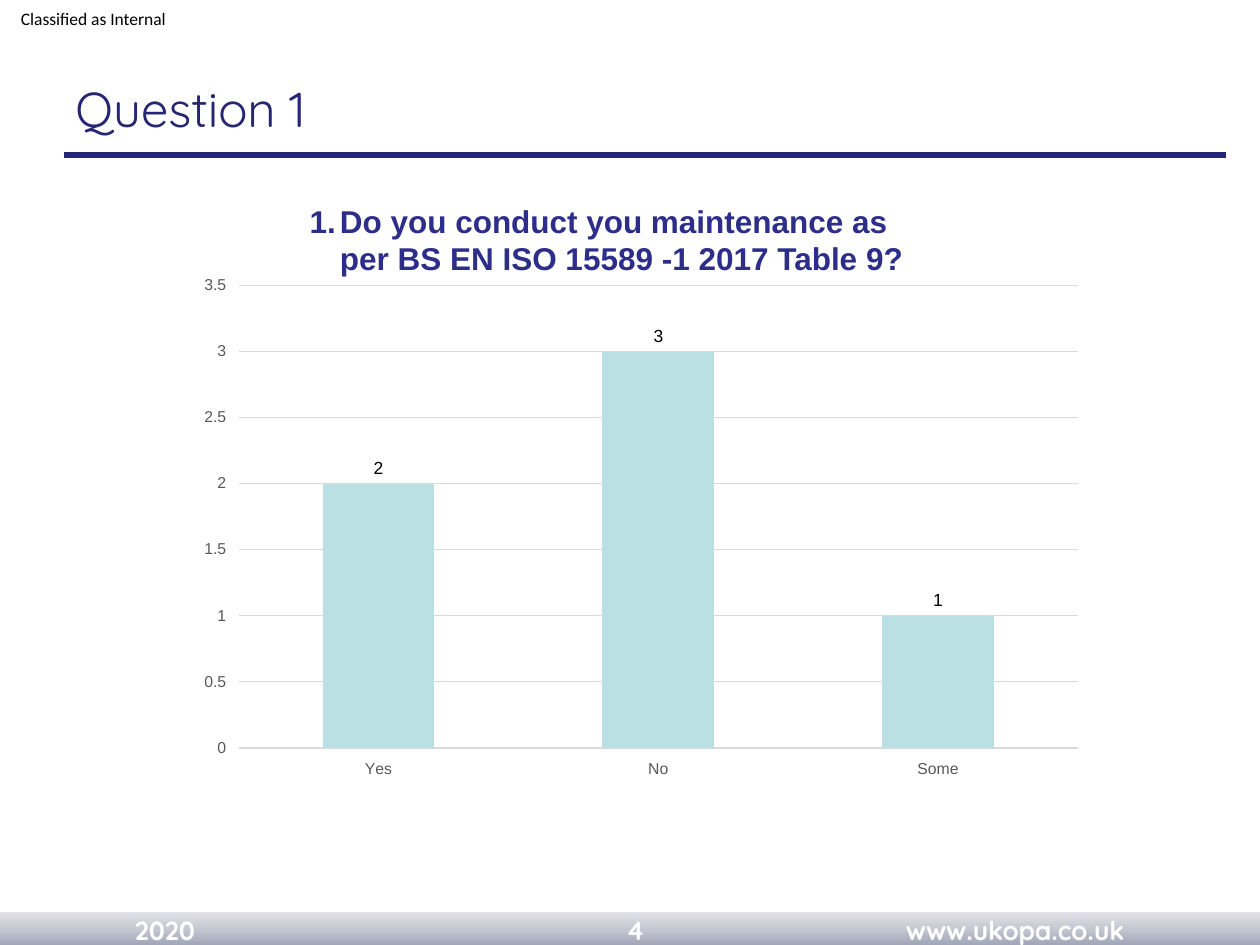
"""Build the Question 1 survey slide with a column chart of the answers."""
from copy import deepcopy
from lxml.etree import SubElement
from pptx import Presentation
from pptx.chart.data import CategoryChartData
from pptx.dml.color import RGBColor
from pptx.enum.chart import XL_CHART_TYPE, XL_LABEL_POSITION, XL_TICK_MARK
from pptx.enum.shapes import MSO_CONNECTOR, MSO_SHAPE
from pptx.enum.text import MSO_ANCHOR, PP_ALIGN
from pptx.oxml import parse_xml
from pptx.oxml.ns import nsdecls, qn
from pptx.util import Inches, Pt

THEME = {
    "navy": RGBColor.from_string("262673"),
    "bar": RGBColor.from_string("BBE0E3"),
    "grid": RGBColor.from_string("D9D9D9"),
    "band": [(0, "9BA0B4"), (0.5, "C3C6D0"), (1, "E2E3E8")],
    "footer": ("Quicksand", 15, True, "FFFFFF"),
    "marking": ("Calibri", 10, False, "000000"),
    "title": ("Quicksand", 28, False, "262673"),
    "question": ("Arial", 18, True, "2D2D8A"),
    "axis": ("Arial", 9, False, "595959"),
    "value": ("Arial", 10, False, "000000"),
}


def style_font(font, role):
    name, size, bold, color = THEME[role]
    for attribute, value in {"name": name, "size": Pt(size), "bold": bold}.items():
        setattr(font, attribute, value)
    font.color.rgb = RGBColor.from_string(color)


def write(frame, text, role, **format_values):
    for attribute, value in format_values.items():
        setattr(frame, attribute, value)
    paragraph = frame.paragraphs[0]
    paragraph.alignment = PP_ALIGN.LEFT
    run = paragraph.add_run()
    run.text = text
    style_font(run.font, role)
    return paragraph


prs = Presentation()
prs.slide_width, prs.slide_height = Inches(10), Inches(7.5)
slide = prs.slides.add_slide(prs.slide_layouts[6])
shapes = slide.shapes

footer = shapes.add_shape(MSO_SHAPE.RECTANGLE, 0, Inches(7.24), Inches(10), Inches(0.28))
footer.shadow.inherit = False
footer.line.fill.background()
footer.fill.gradient()
footer.fill.gradient_angle = 90
first_stop = footer._element.spPr.find(".//" + qn("a:gs"))
first_stop.addnext(deepcopy(first_stop))
for stop, (position, color) in zip(footer.fill.gradient_stops, THEME["band"]):
    stop.position = position
    stop.color.rgb = RGBColor.from_string(color)
footer_line = write(footer.text_frame, "2020\t4\twww.ukopa.co.uk", "footer", word_wrap=True,
                    vertical_anchor=MSO_ANCHOR.MIDDLE, margin_left=Inches(1.07),
                    margin_right=0, margin_top=0, margin_bottom=0)
tabs = SubElement(footer_line._p.get_or_add_pPr(), qn("a:tabLst"))
for stop_at in (3.9, 6.12):
    SubElement(tabs, qn("a:tab"), pos=str(Inches(stop_at)), algn="l")

title_rule = shapes.add_connector(MSO_CONNECTOR.STRAIGHT, Inches(0.51), Inches(1.23),
                                  Inches(9.73), Inches(1.23))
title_rule.line.color.rgb = THEME["navy"]
title_rule.line.width = Pt(3)
SubElement(title_rule._element.spPr, qn("a:effectLst"))

marking = shapes.add_textbox(0, 0, Inches(1.48), Inches(0.29))
write(marking.text_frame, "Classified as Internal", "marking", word_wrap=True,
      vertical_anchor=MSO_ANCHOR.MIDDLE, margin_left=0, margin_right=0,
      margin_top=0, margin_bottom=0).alignment = PP_ALIGN.CENTER

title = shapes.add_textbox(Inches(0.5), Inches(0.58), Inches(6.86), Inches(0.56))
write(title.text_frame, "Question 1", "title", word_wrap=True,
      vertical_anchor=MSO_ANCHOR.MIDDLE)

question = shapes.add_textbox(Inches(2.36), Inches(1.55), Inches(5), Inches(0.71))
numbered = write(question.text_frame,
                 "Do you conduct you maintenance as per BS EN ISO 15589 -1 2017 Table 9?",
                 "question", word_wrap=True)
numbering = numbered._p.get_or_add_pPr()
numbering.set("marL", str(Inches(0.24)))
numbering.set("indent", str(-Inches(0.24)))
SubElement(numbering, qn("a:buFont"), typeface="+mj-lt")
SubElement(numbering, qn("a:buAutoNum"), type="arabicPeriod")

answers = CategoryChartData()
answers.categories = ["Yes", "No", "Some"]
answers.add_series("Series 1", (2, 3, 1))
chart = shapes.add_chart(XL_CHART_TYPE.COLUMN_CLUSTERED, Inches(1.46), Inches(2.1),
                         Inches(7.24), Inches(4.17), answers).chart
style_font(chart.font, "value")
chart.has_title = False
chart.has_legend = False

for axis in (chart.category_axis, chart.value_axis):
    axis.major_tick_mark = XL_TICK_MARK.OUTSIDE
    axis.format.line.fill.background()
    style_font(axis.tick_labels.font, "axis")
scale = chart.value_axis
for attribute, value in {"minimum_scale": 0, "maximum_scale": 3.5, "major_unit": 0.5}.items():
    setattr(scale, attribute, value)
scale.major_gridlines.format.line.color.rgb = THEME["grid"]
scale.major_gridlines.format.line.width = Pt(0.75)

plot = chart.plots[0]
plot.gap_width = 150
plot.vary_by_categories = False
bars = plot.series[0].format.fill
bars.solid()
bars.fore_color.rgb = THEME["bar"]
plot.has_data_labels = True
plot.data_labels.show_value = True
plot.data_labels.position = XL_LABEL_POSITION.OUTSIDE_END
style_font(plot.data_labels.font, "value")

plot_area = chart._chartSpace.chart.plotArea
for old_layout in plot_area.findall(qn("c:layout")):
    plot_area.remove(old_layout)
layout = parse_xml(f'<c:layout {nsdecls("c")}/>')
manual = SubElement(layout, qn("c:manualLayout"))
for tag, value in {"layoutTarget": "inner", "xMode": "edge", "yMode": "edge",
                   "x": "0.06", "y": "0.04", "w": "0.92", "h": "0.88"}.items():
    SubElement(manual, qn(f"c:{tag}"), val=value)
plot_area.insert(0, layout)

prs.save("out.pptx")
